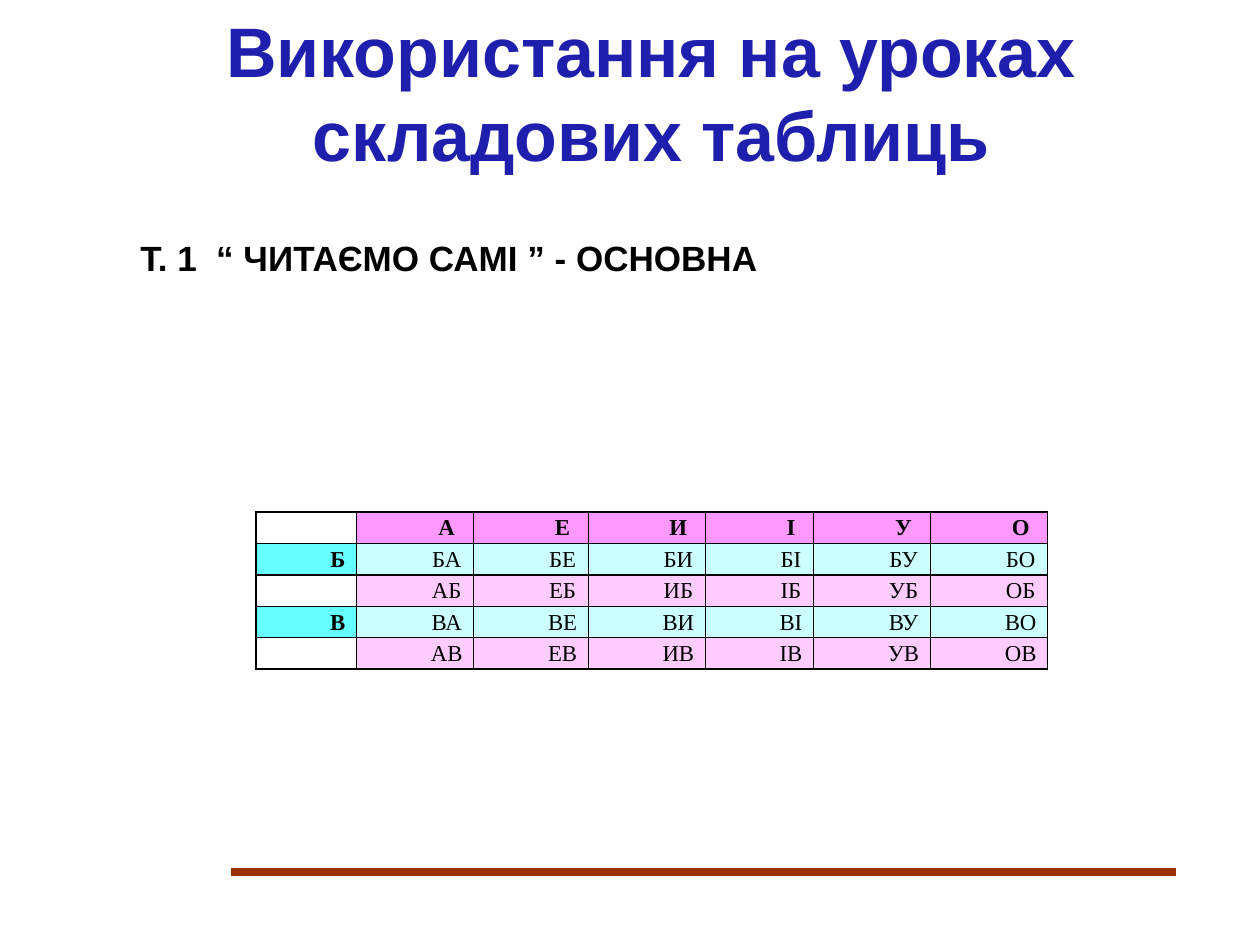
from dataclasses import dataclass
from typing import NamedTuple

from lxml.etree import SubElement
from pptx import Presentation
from pptx.dml.color import RGBColor
from pptx.enum.shapes import MSO_CONNECTOR as Connector
from pptx.enum.text import MSO_ANCHOR as Anchor, PP_ALIGN as Align
from pptx.oxml.ns import qn
from pptx.util import Cm, Pt


@dataclass(frozen=True)
class Theme:
    heading_font: str = "Arial"
    table_font: str = "Times New Roman"
    title_size: float = 40
    subtitle_size: float = 20
    table_size: float = 13
    title: str = "1F1FAD"
    ink: str = "000000"
    rule: str = "993300"
    vowel: str = "FF99FF"
    consonant: str = "66FFFF"
    open_syllable: str = "CCFFFF"
    closed_syllable: str = "FFCCFF"


class CellLook(NamedTuple):
    text: str
    fill: str | None = None
    bold: bool = False


THEME = Theme()
VOWELS = "АЕИІУО"
CONSONANTS = "БВ"
COLUMN_WIDTHS = (2.03, 2.36, 2.31, 2.36, 2.18, 2.36, 2.36)
ROW_HEIGHT = 0.63


def style_font(font, name: str, size: float, color: str, bold: bool) -> None:
    font.name, font.size, font.bold = name, Pt(size), bold
    font.color.rgb = RGBColor.from_string(color)


def syllable_rows() -> list[list[CellLook]]:
    """Vowel header, then an open and a closed syllable row per consonant."""
    rows = [[CellLook("")] + [CellLook(v, THEME.vowel, True) for v in VOWELS]]
    for consonant in CONSONANTS:
        rows.append([CellLook(consonant, THEME.consonant, True)]
                    + [CellLook(consonant + v, THEME.open_syllable) for v in VOWELS])
        rows.append([CellLook("")]
                    + [CellLook(v + consonant, THEME.closed_syllable) for v in VOWELS])
    return rows


def add_borders(cell) -> None:
    properties = cell._tc.get_or_add_tcPr()
    for position, side in enumerate(("a:lnL", "a:lnR", "a:lnT", "a:lnB")):
        line = SubElement(properties, qn(side), w=str(Pt(1)))
        fill = SubElement(line, qn("a:solidFill"))
        SubElement(fill, qn("a:srgbClr"), val=THEME.ink)
        properties.insert(position, line)


def fill_cell(cell, look: CellLook) -> None:
    cell.margin_left = cell.margin_right = Cm(0.18)
    cell.margin_top = cell.margin_bottom = 0
    if look.fill:
        cell.fill.solid()
        cell.fill.fore_color.rgb = RGBColor.from_string(look.fill)
    else:
        cell.fill.background()
    add_borders(cell)
    para = cell.text_frame.paragraphs[0]
    para.text = look.text
    para.alignment, para.line_spacing = Align.CENTER, 1.15
    style_font(para.font, THEME.table_font, THEME.table_size, THEME.ink, look.bold)
    para._p.get_or_add_pPr().set("marL", str(Cm(1.27)))
    para._p.get_or_add_pPr().set("indent", "0")
    if not look.text:  # an empty cell takes its height from the end mark
        para._p.get_or_add_endParaRPr().set("sz", str(int(THEME.table_size * 100)))


def add_syllable_table(slide) -> None:
    rows = syllable_rows()
    table = slide.shapes.add_table(
        len(rows), len(COLUMN_WIDTHS), Cm(5.16), Cm(10.32),
        Cm(sum(COLUMN_WIDTHS)), Cm(ROW_HEIGHT * len(rows))).table
    table.first_row = table.horz_banding = False
    for column, width in zip(table.columns, COLUMN_WIDTHS):
        column.width = Cm(width)
    for row, looks in zip(table.rows, rows):
        row.height = Cm(ROW_HEIGHT)
        for cell, look in zip(row.cells, looks):
            fill_cell(cell, look)


def add_title(slide) -> None:
    title = slide.shapes.title
    title.left, title.top, title.width, title.height = Cm(1.9), 0, Cm(22.45), Cm(3.68)
    frame = title.text_frame
    frame.text = "Використання на уроках складових таблиць"
    frame.word_wrap, frame.vertical_anchor = True, Anchor.MIDDLE
    para = frame.paragraphs[0]
    para.alignment = Align.CENTER
    style_font(para.font, THEME.heading_font, THEME.title_size, THEME.title, True)


def add_subtitle(slide) -> None:
    box = slide.shapes.add_textbox(Cm(2.34), Cm(4.65), Cm(13.23), Cm(1.12))
    frame = box.text_frame
    frame.text = " Т. 1  “ ЧИТАЄМО САМІ ” - ОСНОВНА"
    frame.word_wrap = False
    para = frame.paragraphs[0]
    para.alignment = Align.CENTER
    style_font(para.font, THEME.heading_font, THEME.subtitle_size, THEME.ink, True)


def add_rule(slide) -> None:
    rule = slide.shapes.add_connector(
        Connector.STRAIGHT, Cm(4.65), Cm(17.57), Cm(23.7), Cm(17.57))
    rule.line.width = Pt(4.5)
    rule.line.color.rgb = RGBColor.from_string(THEME.rule)
    SubElement(rule._element.spPr, qn("a:effectLst"))


def main() -> None:
    deck = Presentation()
    deck.slide_width, deck.slide_height = Cm(25.4), Cm(19.05)
    page = deck.slides.add_slide(deck.slide_layouts[5])
    add_rule(page)
    add_title(page)
    add_subtitle(page)
    add_syllable_table(page)
    deck.save("out.pptx")


if __name__ == "__main__":
    main()
